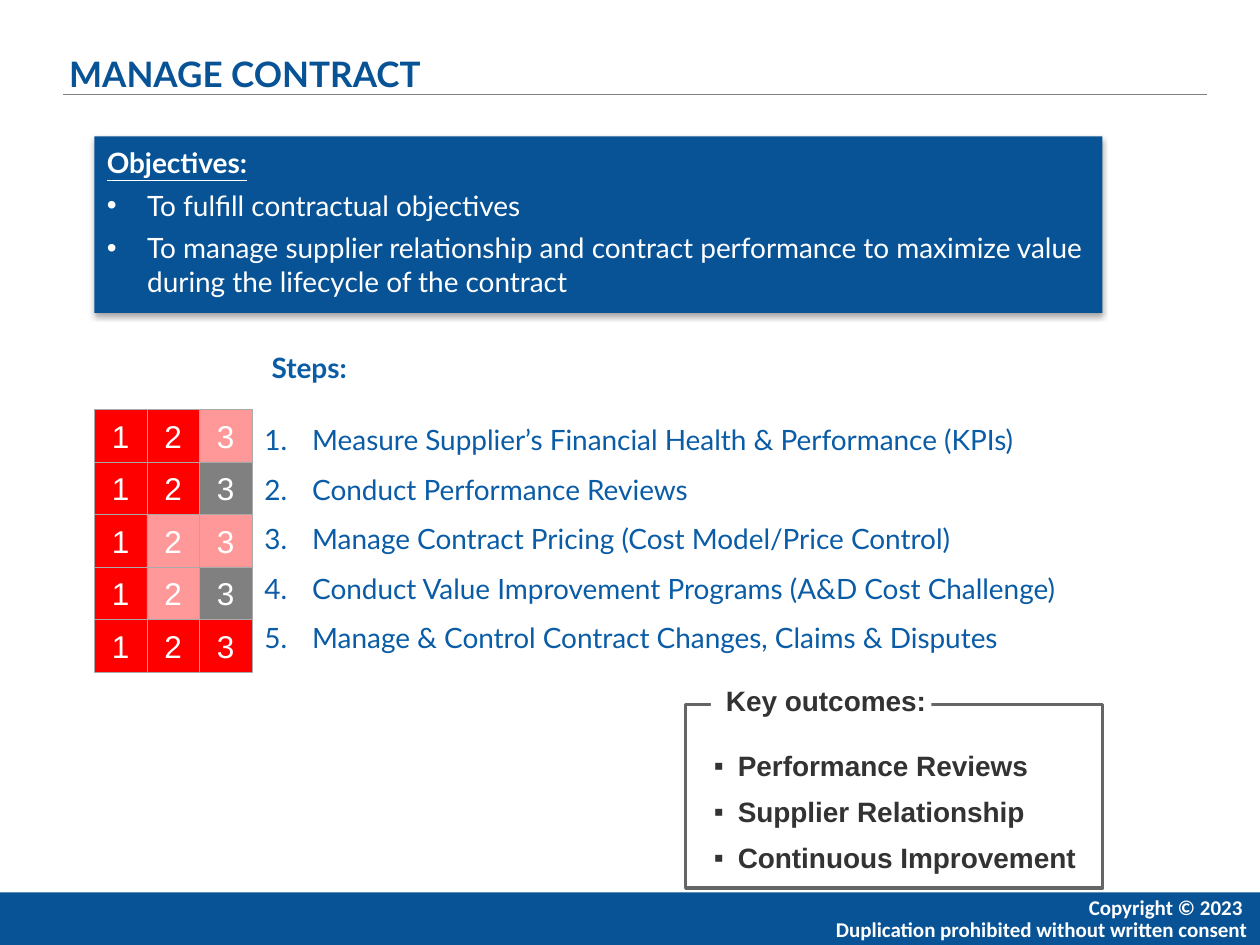
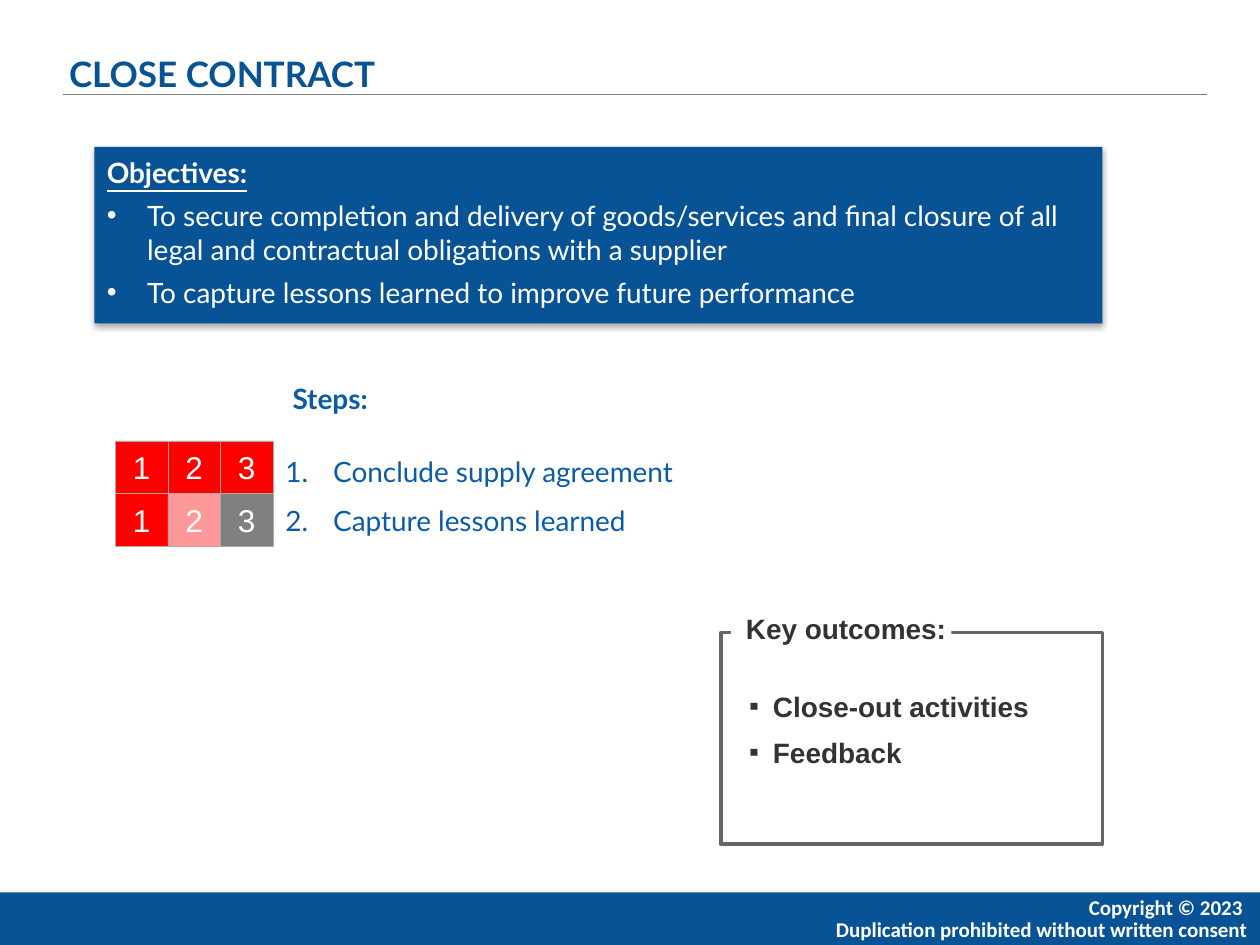
from lxml import etree
from pptx import Presentation
from pptx import util as u
from pptx.dml.color import RGBColor
from pptx.enum import shapes, text
from pptx.oxml import ns

BLUE = RGBColor(0x08, 0x53, 0x96)
STEP = RGBColor(0x0A, 0x5C, 0xA6)
RED = RGBColor(0xFF, 0x00, 0x00)
PINK = RGBColor(0xFF, 0x99, 0x99)
GRAY = RGBColor(0x80, 0x80, 0x80)
EDGE = RGBColor(0xAA, 0xAA, 0xAA)
FRAME = RGBColor(0x65, 0x65, 0x65)
DARK = RGBColor(0x33, 0x33, 0x33)
WHITE = RGBColor(0xFF, 0xFF, 0xFF)
TONES = {"R": RED, "P": PINK, "G": GRAY}
LEFT, MID, RIGHT = text.PP_ALIGN.LEFT, text.PP_ALIGN.CENTER, text.PP_ALIGN.RIGHT
TOP, CORE, BASE = text.MSO_ANCHOR.TOP, text.MSO_ANCHOR.MIDDLE, text.MSO_ANCHOR.BOTTOM

deck = Presentation()
deck.slide_width, deck.slide_height = u.Inches(10), u.Inches(7.5)
COLS, ROWS = 24, 18
UNIT = deck.slide_width / COLS


def block(page, x, y, w, h, fill=None, line=None, width=1):
    box = page.shapes.add_shape(shapes.MSO_SHAPE.RECTANGLE,
                                *[round(n * UNIT) for n in (x, y, w, h)])
    box.shadow.inherit = False
    if fill is None:
        box.fill.background()
    else:
        box.fill.solid()
        box.fill.fore_color.rgb = fill
    if line is None:
        box.line.fill.background()
    else:
        box.line.color.rgb = line
        box.line.width = u.Pt(width)
    return box


def write(box, lines, font="Lato", size=16, color=WHITE, bold=False, align=LEFT,
          anchor=TOP, inset=(0.1, 0.05), space=1, before=0, after=0,
          indent=0, hang=0, mark=None, head=False):
    frame = box.text_frame
    frame.word_wrap = True
    frame.vertical_anchor = anchor
    frame.margin_left = frame.margin_right = u.Inches(inset[0])
    frame.margin_top = frame.margin_bottom = u.Inches(inset[1])
    for i, line in enumerate(lines):
        para = frame.paragraphs[0] if i == 0 else frame.add_paragraph()
        title = head and i == 0
        props = para._p.get_or_add_pPr()
        if indent and not title:
            props.set("marL", str(u.Inches(indent)))
            props.set("indent", str(-u.Inches(hang)))
        if mark == "1.":
            etree.SubElement(props, ns.qn("a:buFont"), typeface="+mj-lt")
            etree.SubElement(props, ns.qn("a:buAutoNum"), type="arabicPeriod")
        elif mark and not title:
            etree.SubElement(props, ns.qn("a:buFont"), typeface="Arial")
            etree.SubElement(props, ns.qn("a:buChar"), char=mark)
        para.alignment = align
        para.line_spacing = space
        para.space_before = u.Pt(before if i else 0)
        para.space_after = u.Pt(after)
        run = para.add_run()
        run.text = line
        run.font.name = font
        run.font.size = u.Pt(size)
        run.font.bold = bold or title
        run.font.underline = title
        run.font.color.rgb = color


pages = [
    dict(title="MANAGE CONTRACT", top=2.6,
         goals=["To fulfill contractual objectives",
                "To manage supplier relationship and contract performance to "
                "maximize value during the lifecycle of the contract"],
         grid=(1.8, 7.8), cells=["RRP", "RRG", "RPP", "RPG", "RRR"],
         steps=["Measure Supplier’s Financial Health & Performance (KPIs)",
                "Conduct Performance Reviews",
                "Manage Contract Pricing (Cost Model/Price Control)",
                "Conduct Value Improvement Programs (A&D Cost Challenge)",
                "Manage & Control Contract Changes, Claims & Disputes"],
         frame=(13.06, 13.42, 7.94, 3.5), label=0.48, drop=0.91,
         wins=["Performance Reviews", "Supplier Relationship",
               "Continuous Improvement"]),
    dict(title="CLOSE CONTRACT", top=2.8,
         goals=["To secure completion and delivery of goods/services and final "
                "closure of all legal and contractual obligations with a supplier",
                "To capture lessons learned to improve future performance"],
         grid=(2.2, 8.4), cells=["RRR", "RPG"],
         steps=["Conclude supply agreement", "Capture lessons learned"],
         frame=(13.73, 12.05, 7.27, 4.03), label=0.19, drop=1.15,
         wins=["Close-out activities", "Feedback"]),
]

for data in pages:
    page = deck.slides.add_slide(deck.slide_layouts[6])

    block(page, 0, ROWS - 1, COLS, 1, BLUE)
    rule = page.shapes.add_connector(
        shapes.MSO_CONNECTOR.STRAIGHT,
        *[round(n * UNIT) for n in (1.2, 1.8, 23, 1.8)])
    rule.line.color.rgb = GRAY
    rule.line.width = u.Pt(1)
    etree.SubElement(rule._element.spPr, ns.qn("a:effectLst"))
    write(block(page, 13.2, ROWS - 1, 10.8, 1.08),
          ["Copyright © 2023 ", "Duplication prohibited without written consent"],
          font="Calibri", size=12, bold=True, align=RIGHT, space=0.85)
    write(block(page, 1.08, 0.31, 21.8, 1.61), [data["title"]],
          size=20, color=BLUE, bold=True, anchor=BASE, space=0.9)

    goal = block(page, 1.8, data["top"], 19.2, 3.36, BLUE)
    glow = etree.SubElement(
        goal._element.spPr.find(ns.qn("a:effectLst")), ns.qn("a:outerShdw"),
        blurRad=str(u.Pt(3.1)), dist=str(u.Pt(1.8)), dir="5400000", rotWithShape="0")
    tint = etree.SubElement(glow, ns.qn("a:srgbClr"), val="000000")
    etree.SubElement(tint, ns.qn("a:alpha"), val="35000")
    write(goal, ["Objectives:"] + data["goals"], inset=(0.1, 0.07),
          before=5.3, indent=0.32, hang=0.32, mark="•", head=True)

    x, y = data["grid"]
    count = len(data["steps"])
    write(block(page, x + 3, y + 0.1, 16.6, count), data["steps"],
          color=STEP, space=1.05, before=5.2, after=3,
          indent=0.38, hang=0.38, mark="1.")
    write(block(page, x + 3, y - 1.25, 2.18, 0.89), ["Steps:"],
          color=STEP, bold=True, align=MID)
    for r, row in enumerate(data["cells"]):
        for c, tone in enumerate(row):
            cell = block(page, x + c, y + r, 1, 1, TONES[tone], EDGE, 0.25)
            write(cell, [str(c + 1)], font="Arial", size=18, align=MID, anchor=CORE)

    x, y, w, h = data["frame"]
    bold = dict(font="Arial", color=DARK, bold=True, inset=(0, 0), space=0.9)
    block(page, x, y, w, h, line=FRAME, width=2)
    write(block(page, x + 0.25, y + data["drop"], w - 0.25, 2.4), data["wins"],
          before=6, after=3, indent=0.31, hang=0.19, mark="▪", **bold)
    write(block(page, x + data["label"], y - 0.33, 4.2, 0.67, WHITE),
          ["Key outcomes:"], indent=0.12, **bold)

deck.save("out.pptx")
